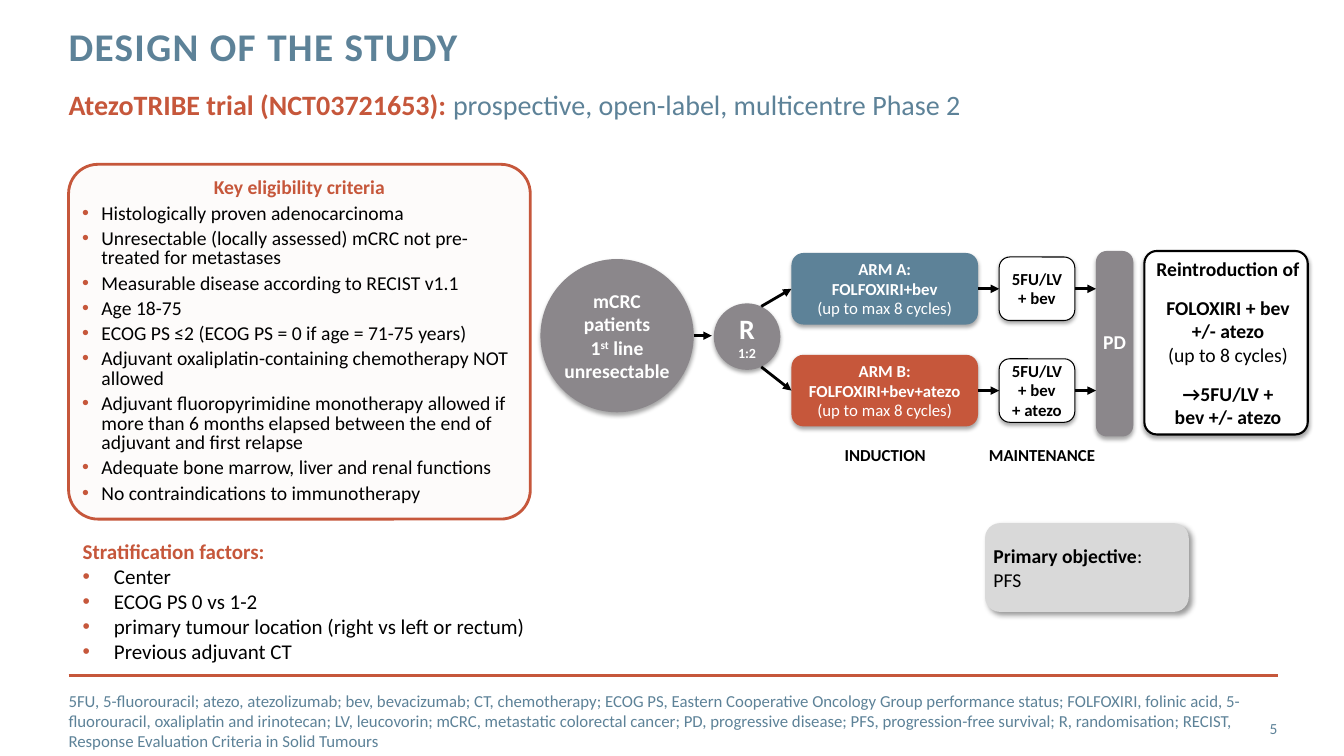
from dataclasses import dataclass
from typing import Optional

from lxml import etree
from pptx import Presentation
from pptx.dml.color import RGBColor
from pptx.enum.shapes import MSO_CONNECTOR, MSO_SHAPE
from pptx.enum.text import MSO_ANCHOR, MSO_AUTO_SIZE, PP_ALIGN
from pptx.oxml.ns import qn
from pptx.util import Inches, Pt

ROUNDED, OVAL = MSO_SHAPE.ROUNDED_RECTANGLE, MSO_SHAPE.OVAL
TOP, MIDDLE = MSO_ANCHOR.TOP, MSO_ANCHOR.MIDDLE
LEFT, CENTER, RIGHT = PP_ALIGN.LEFT, PP_ALIGN.CENTER, PP_ALIGN.RIGHT
STRAIGHT = MSO_CONNECTOR.STRAIGHT
FONT = "Calibri"
COLORS = {"blue": "5D8298", "red": "C6573B", "grey": "8B878B", "silver": "D9D9D9",
          "cream": "FDFBFA", "white": "FFFFFF", "black": "000000"}


@dataclass
class Span:
    text: str
    bold: Optional[bool] = None
    color: Optional[str] = None
    size: Optional[float] = None
    raised: bool = False


@dataclass
class Para:
    spans: list[Span]
    size: float
    color: str = "black"
    bold: bool = False
    align: PP_ALIGN = LEFT
    line: Optional[float] = None
    before: float = 0
    after: float = 0
    indent: float = 0


@dataclass(frozen=True)
class Shadow:
    alpha: int
    blur: float
    distance: float
    angle: int


@dataclass
class Panel:
    at: tuple[float, float, float, float]
    fill: str
    paras: list[Para]
    kind: MSO_SHAPE = ROUNDED
    corner: Optional[float] = None
    outline: Optional[str] = None
    width: float = 0
    shadow: Optional[Shadow] = Shadow(35, 3.1, 1.8, 90)
    insets: tuple[float, float, float, float] = (0, 0, 0, 0)


def rgb(name: str) -> RGBColor:
    return RGBColor.from_string(COLORS[name])


def add(parent, tag: str, **attributes):
    return etree.SubElement(parent, qn(tag), {key: str(value) for key, value in attributes.items()})


def set_bullet(para, indent: float) -> None:
    props = para._p.get_or_add_pPr()
    props.set("marL", str(Inches(indent)))
    props.set("indent", str(-Inches(indent)))
    add(add(props, "a:buClr"), "a:srgbClr", val=COLORS["red"])
    add(props, "a:buFont", typeface="Arial")
    add(props, "a:buChar", char="•")


def write(frame, paras: list[Para], insets=(0, 0, 0, 0), anchor=TOP, wrap=True) -> None:
    frame.word_wrap = wrap
    frame.auto_size = MSO_AUTO_SIZE.NONE
    frame.vertical_anchor = anchor
    frame.margin_left, frame.margin_top, frame.margin_right, frame.margin_bottom = map(Inches, insets)
    for index, item in enumerate(paras):
        para = frame.add_paragraph() if index else frame.paragraphs[0]
        if item.indent:
            set_bullet(para, item.indent)
        para.alignment = item.align
        para.space_before, para.space_after = Pt(item.before), Pt(item.after)
        if item.line:
            para.line_spacing = Pt(item.line)
        para.font.name, para.font.size, para.font.bold = FONT, Pt(item.size), item.bold
        para.font.color.rgb = rgb(item.color)
        for span in item.spans:
            for number, piece in enumerate(span.text.split("\n")):
                if number:
                    para.add_line_break()
                if piece:
                    add_run(para, piece, span)


def add_run(para, text: str, span: Span) -> None:
    run = para.add_run()
    run.text = text
    if span.bold is not None:
        run.font.bold = span.bold
    if span.color:
        run.font.color.rgb = rgb(span.color)
    if span.size:
        run.font.size = Pt(span.size)
    if span.raised:
        run._r.get_or_add_rPr().set("baseline", "30000")


def add_text(page, at, paras: list[Para], **layout) -> None:
    write(page.shapes.add_textbox(*map(Inches, at)).text_frame, paras, **layout)


def add_panel(page, panel: Panel):
    shape = page.shapes.add_shape(panel.kind, *map(Inches, panel.at))
    if panel.corner:
        shape.adjustments[0] = panel.corner
    shape.fill.solid()
    shape.fill.fore_color.rgb = rgb(panel.fill)
    if panel.outline:
        shape.line.color.rgb = rgb(panel.outline)
        shape.line.width = Pt(panel.width)
    else:
        shape.line.fill.background()
    shape.shadow.inherit = False
    if panel.shadow:
        cast = panel.shadow
        effects = shape._element.spPr.find(qn("a:effectLst"))
        outer = add(effects, "a:outerShdw", blurRad=Pt(cast.blur), dist=Pt(cast.distance),
                    dir=cast.angle * 60000, algn="t", rotWithShape=0)
        add(add(outer, "a:srgbClr", val=COLORS["black"]), "a:alpha", val=cast.alpha * 1000)
    write(shape.text_frame, panel.paras, panel.insets, MIDDLE)
    return shape


def add_line(page, start, end, color: str = "black", arrow: bool = True):
    line = page.shapes.add_connector(STRAIGHT, *map(Inches, (*start, *end)))
    line.line.color.rgb = rgb(color)
    line.line.width = Pt(2)
    if arrow:
        add(line.line._get_or_add_ln(), "a:tailEnd", type="triangle")
    add(line._element.spPr, "a:effectLst")
    return line


def add_arm(page, top: float, color: str, name: str, drugs: str, upkeep: str) -> None:
    """Draw one treatment arm: induction, maintenance and the arrows around them."""
    center = top + 0.355
    induction = add_panel(page, Panel((7.85, top, 1.85, 0.71), color, [
        Para([Span(name)], 12, "white", True, CENTER, 14),
        Para([Span(drugs + "\n"), Span("(up to max 8 cycles)", False)], 12, "white", True, CENTER, 14)]))
    maintenance = add_panel(page, Panel((9.91, center - 0.315, 0.75, 0.63), "white", [
        Para([Span(upkeep)], 12, "black", True, CENTER, 14)], outline="black", width=0.75))
    side = -1 if center < 3.34 else 1
    add_line(page, (7.55, 3.34 + side * 0.3), (7.85, center)).end_connect(induction, 1)
    link = add_line(page, (9.7, center), (9.91, center))
    link.begin_connect(induction, 3)
    link.end_connect(maintenance, 1)
    add_line(page, (10.66, center), (10.87, center)).begin_connect(maintenance, 3)


CRITERIA = [
    "Histologically proven adenocarcinoma",
    "Unresectable (locally assessed) mCRC not pre-treated for metastases",
    "Measurable disease according to RECIST v1.1",
    "Age 18-75",
    "ECOG PS ≤2 (ECOG PS = 0 if age = 71-75 years)",
    "Adjuvant oxaliplatin-containing chemotherapy NOT allowed",
    "Adjuvant fluoropyrimidine monotherapy allowed if\nmore than 6 months elapsed between the end of\n"
    "adjuvant and first relapse",
    "Adequate bone marrow, liver and renal functions",
    "No contraindications to immunotherapy",
]
FACTORS = ["Center", "ECOG PS 0 vs 1-2", "primary tumour location (right vs left or rectum)",
           "Previous adjuvant CT"]
ABBREVIATIONS = (
    "5FU, 5-fluorouracil; atezo, atezolizumab; bev, bevacizumab; CT, chemotherapy; ECOG PS, Eastern "
    "Cooperative Oncology Group performance status; FOLFOXIRI, folinic acid, 5-fluorouracil, oxaliplatin "
    "and irinotecan; LV, leucovorin; mCRC, metastatic colorectal cancer; PD, progressive disease; PFS, "
    "progression-free survival; R, randomisation; RECIST, Response Evaluation Criteria in Solid Tumours")
PANELS = [
    Panel((9.77, 5.19, 2.02, 0.88), "silver", [
        Para([Span("Primary objective", True), Span(":")], 14), Para([Span("PFS")], 14)],
        shadow=Shadow(40, 4, 3, 45), insets=(0.04, 0.05, 0.04, 0.05)),
    Panel((0.68, 1.63, 4.58, 3.52), "cream", [
        Para([Span("Key eligibility criteria")], 14, "red", True, CENTER, 14, after=4),
        *(Para([Span(text)], 14, line=14, after=4, indent=0.19) for text in CRITERIA)],
        corner=0.083, outline="red", width=2, shadow=None, insets=(0.05,) * 4),
    Panel((7.08, 3.01, 0.66, 0.66), "grey", [
        Para([Span("R\n"), Span("1:2", size=10)], 20, "white", True, CENTER)],
        OVAL, insets=(0.1, 0.05, 0.1, 0.05)),
    Panel((5.36, 2.57, 1.52, 1.52), "grey", [
        Para([Span("mCRC patients\n1"), Span("st", raised=True), Span(" line\nunresectable")],
             14, "white", True, CENTER)], OVAL, insets=(0, 0.05, 0, 0.05)),
    Panel((10.87, 2.49, 0.37, 1.84), "grey", [
        Para([Span("PD")], 14, "white", True, CENTER, 14)], corner=0.29),
    Panel((11.35, 2.49, 1.62, 1.82), "white", [
        Para([Span("Reintroduction of")], 14, "black", True, CENTER, after=9),
        Para([Span("FOLOXIRI + bev\n+/- atezo\n"), Span("(up to 8 cycles)", False)],
             14, "black", True, CENTER, before=2, after=9),
        Para([Span("→5FU/LV +\nbev +/- atezo")], 14, "black", True, CENTER, before=2)],
        corner=0.076, outline="black", width=1.5, insets=(0.04, 0, 0, 0)),
]


def main() -> None:
    deck = Presentation()
    deck.slide_width, deck.slide_height = Inches(13.33), Inches(7.5)
    page = deck.slides.add_slide(deck.slide_layouts[5])
    title = page.shapes.title
    title.left, title.top, title.width, title.height = map(Inches, (0.68, 0.27, 9.56, 0.88))
    write(title.text_frame, [Para([Span("DESIGN OF THE STUDY")], 28, "blue", True, line=30)])
    title.text_frame.paragraphs[0].runs[0]._r.get_or_add_rPr().set("spc", "100")
    add_text(page, (0.68, 0.87, 10.03, 0.39), [Para([
        Span("AtezoTRIBE trial (NCT03721653): ", True, "red"),
        Span("prospective, open-label, multicentre Phase 2")], 20, "blue")])
    add_line(page, (0.68, 6.7), (12.68, 6.7), "red", arrow=False)
    add_text(page, (0.68, 6.95, 12.13, 0.4), [Para([Span(ABBREVIATIONS)], 12, "blue")], anchor=MIDDLE)
    add_text(page, (11.81, 7.03, 0.86, 0.4), [Para([Span("5")], 11, "blue", align=RIGHT)], anchor=MIDDLE)
    add_text(page, (0.82, 5.29, 5.11, 1.36), [
        Para([Span("Stratification factors:")], 15, "red", True),
        *(Para([Span(text)], 15, indent=0.31) for text in FACTORS)], insets=(0, 0.05, 0.1, 0.05))
    for panel in PANELS:
        add_panel(page, panel)
    add_line(page, (6.88, 3.33), (7.06, 3.33))
    add_arm(page, 2.51, "blue", "ARM A:", "FOLFOXIRI+bev", "5FU/LV\n+ bev")
    add_arm(page, 3.52, "red", "ARM B:", "FOLFOXIRI+bev+atezo", "5FU/LV\n+ bev\n+ atezo")
    for label, left, width in (("INDUCTION", 8.27, 1.02), ("MAINTENANCE", 9.7, 1.27)):
        add_text(page, (left, 4.36, width, 0.3), [Para([Span(label)], 12, bold=True, align=CENTER)],
                 insets=(0.1, 0.05, 0.1, 0.05), wrap=False)
    deck.save("out.pptx")


if __name__ == "__main__":
    main()
